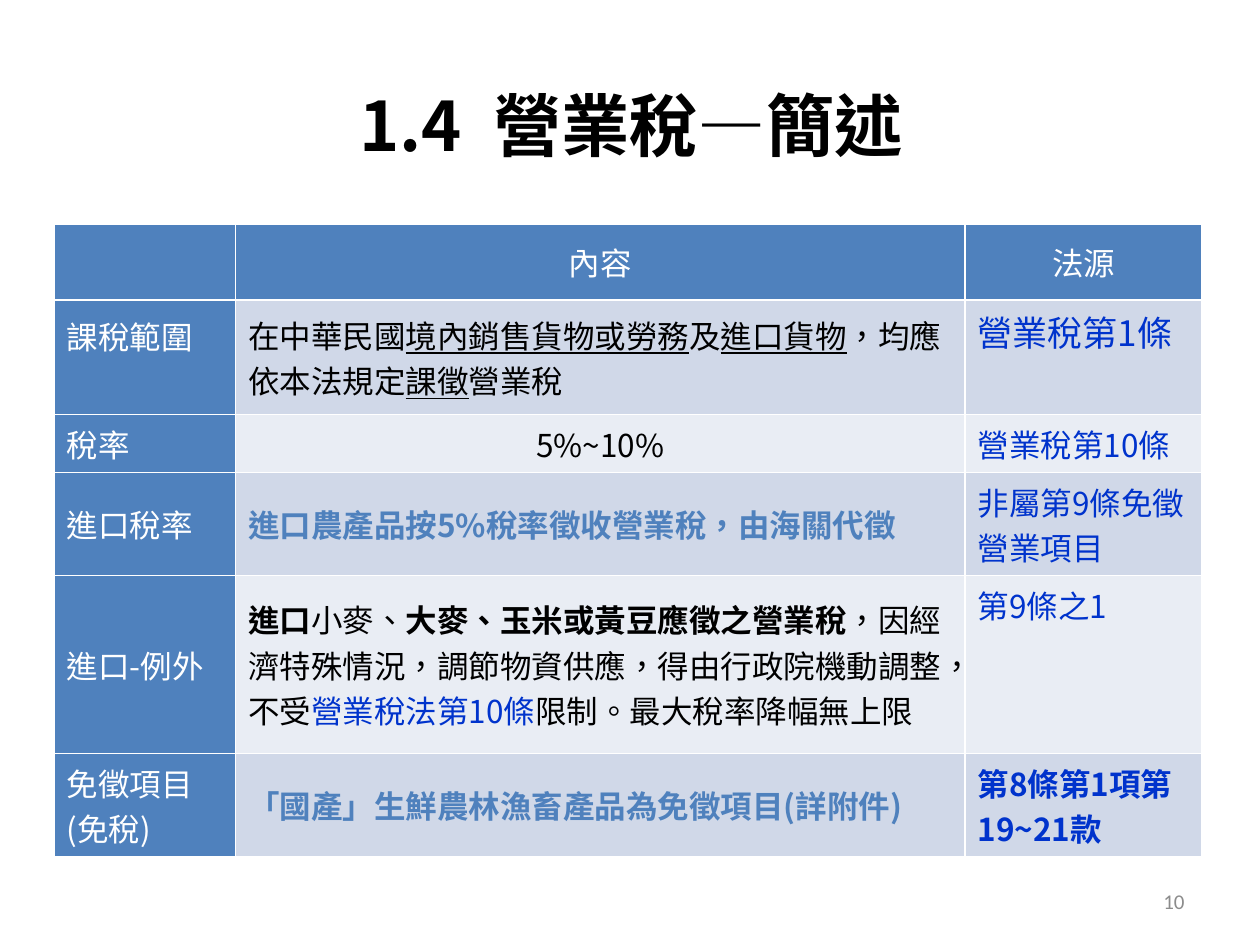
from lxml import etree
from pptx import Presentation
from pptx.dml.color import RGBColor
from pptx.enum.lang import MSO_LANGUAGE_ID as Language
from pptx.enum.text import MSO_ANCHOR as Anchor, PP_ALIGN as Align
from pptx.oxml.ns import qn
from pptx.util import Inches, Pt

COLORS = {
    "black": "000000", "white": "FFFFFF", "gray": "8C8C8C", "header": "4F81BD",
    "link": "0033CC", "band_dark": "D0D8E8", "band_light": "E9EDF4",
}
FONT = "Noto Sans CJK SC"
COLUMN_WIDTHS = [1.44, 5.79, 1.88]
ROW_HEIGHTS = [0.6, 0.91, 0.46, 0.82, 1.41, 0.82]
HEADINGS = ["", "內容", "法源"]
BOLD = {"bold": True}
UNDERLINE = {"underline": True}
LINK = {"color": "link"}
HIGHLIGHT = {"color": "header", "bold": True}
ROWS = [
    (["課稅範圍"],
     [("在中華民國", {}), ("境內銷售貨物或勞務", UNDERLINE), ("及", {}),
      ("進口貨物", UNDERLINE), ("，均應依本法規定", {}), ("課徵", UNDERLINE), ("營業稅", {})],
     ("營業稅第1條", {"color": "link", "size": 20})),
    (["稅率"], [("5%~10%", {})], ("營業稅第10條", LINK)),
    (["進口稅率"], [("進口農產品按5%稅率徵收營業稅，由海關代徵", HIGHLIGHT)],
     ("非屬第9條免徵營業項目", LINK)),
    (["進口-例外"],
     [("進口", BOLD), ("小麥、", {}), ("大麥、玉米或黃豆應徵之營業稅", BOLD),
      ("，因經濟特殊情況，調節物資供應，得由行政院機動調整，不受", {}),
      ("營業稅法第10條", LINK), ("限制。最大稅率降幅無上限", {})],
     ("第9條之1", LINK)),
    (["免徵項目", "(免稅)"], [("「國產」生鮮農林漁畜產品為免徵項目(詳附件)", HIGHLIGHT)],
     ("第8條第1項第19~21款", {"color": "link", "bold": True})),
]


def rgb(name):
    return RGBColor.from_string(COLORS[name])


def add_run(paragraph, text, size=18, color="black", bold=False, underline=False, font=FONT):
    run = paragraph.add_run()
    run.text = text
    run.font.size = Pt(size)
    run.font.name = font
    run.font.bold = bold
    run.font.underline = underline
    run.font.color.rgb = rgb(color)
    run.font.language_id = Language.TRADITIONAL_CHINESE
    east_asian = etree.SubElement(run.font._element, qn("a:ea"))
    east_asian.set("typeface", font)


def add_label(slide, box, text, align, **style):
    frame = slide.shapes.add_textbox(*map(Inches, box)).text_frame
    frame.word_wrap = True
    frame.vertical_anchor = Anchor.MIDDLE
    frame.paragraphs[0].alignment = align
    add_run(frame.paragraphs[0], text, **style)


def add_borders(cell):
    properties = cell._tc.get_or_add_tcPr()
    for side in ("lnL", "lnR", "lnT", "lnB"):
        line = etree.SubElement(properties, qn(f"a:{side}"), w=str(Pt(1)))
        fill = etree.SubElement(line, qn("a:solidFill"))
        etree.SubElement(fill, qn("a:srgbClr"), val=COLORS["white"])


def fill_cell(cell, fill, paragraphs, align=Align.LEFT, anchor=Anchor.MIDDLE):
    add_borders(cell)
    cell.fill.solid()
    cell.fill.fore_color.rgb = rgb(fill)
    cell.vertical_anchor = anchor
    frame = cell.text_frame
    for index, runs in enumerate(paragraphs):
        paragraph = frame.add_paragraph() if index else frame.paragraphs[0]
        paragraph.alignment = align
        for text, style in runs:
            add_run(paragraph, text, **style)


def add_tax_table(slide):
    table = slide.shapes.add_table(
        len(ROW_HEIGHTS), len(COLUMN_WIDTHS), Inches(0.43), Inches(1.78),
        Inches(sum(COLUMN_WIDTHS)), Inches(sum(ROW_HEIGHTS))).table
    for column, width in zip(table.columns, COLUMN_WIDTHS):
        column.width = Inches(width)
    for row, height in zip(table.rows, ROW_HEIGHTS):
        row.height = Inches(height)

    white = {"color": "white"}
    for index, heading in enumerate(HEADINGS):
        paragraphs = [[(heading, white)]] if heading else []
        fill_cell(table.cell(0, index), "header", paragraphs, Align.CENTER)
    for index, (labels, content, source) in enumerate(ROWS, start=1):
        band = "band_dark" if index % 2 else "band_light"
        content_align = Align.CENTER if index == 2 else Align.LEFT
        fill_cell(table.cell(index, 0), "header", [[(label, white)] for label in labels])
        fill_cell(table.cell(index, 1), band, [content], content_align)
        fill_cell(table.cell(index, 2), band, [[source]], anchor=Anchor.TOP)

    scope_label = table.cell(1, 0)
    scope_label.vertical_anchor = Anchor.TOP
    scope_label.margin_top = Inches(0.1)


def main():
    presentation = Presentation()
    presentation.slide_width = Inches(10)
    presentation.slide_height = Inches(7.5)
    slide = presentation.slides.add_slide(presentation.slide_layouts[6])
    add_label(slide, (0.51, 0.36, 9, 1.25), "1.4  營業稅—簡述", Align.CENTER, size=39, bold=True)
    add_tax_table(slide)
    add_label(slide, (7.17, 6.95, 2.33, 0.4), "10", Align.RIGHT,
              size=12, color="gray", font="Calibri")
    presentation.save("out.pptx")


if __name__ == "__main__":
    main()
